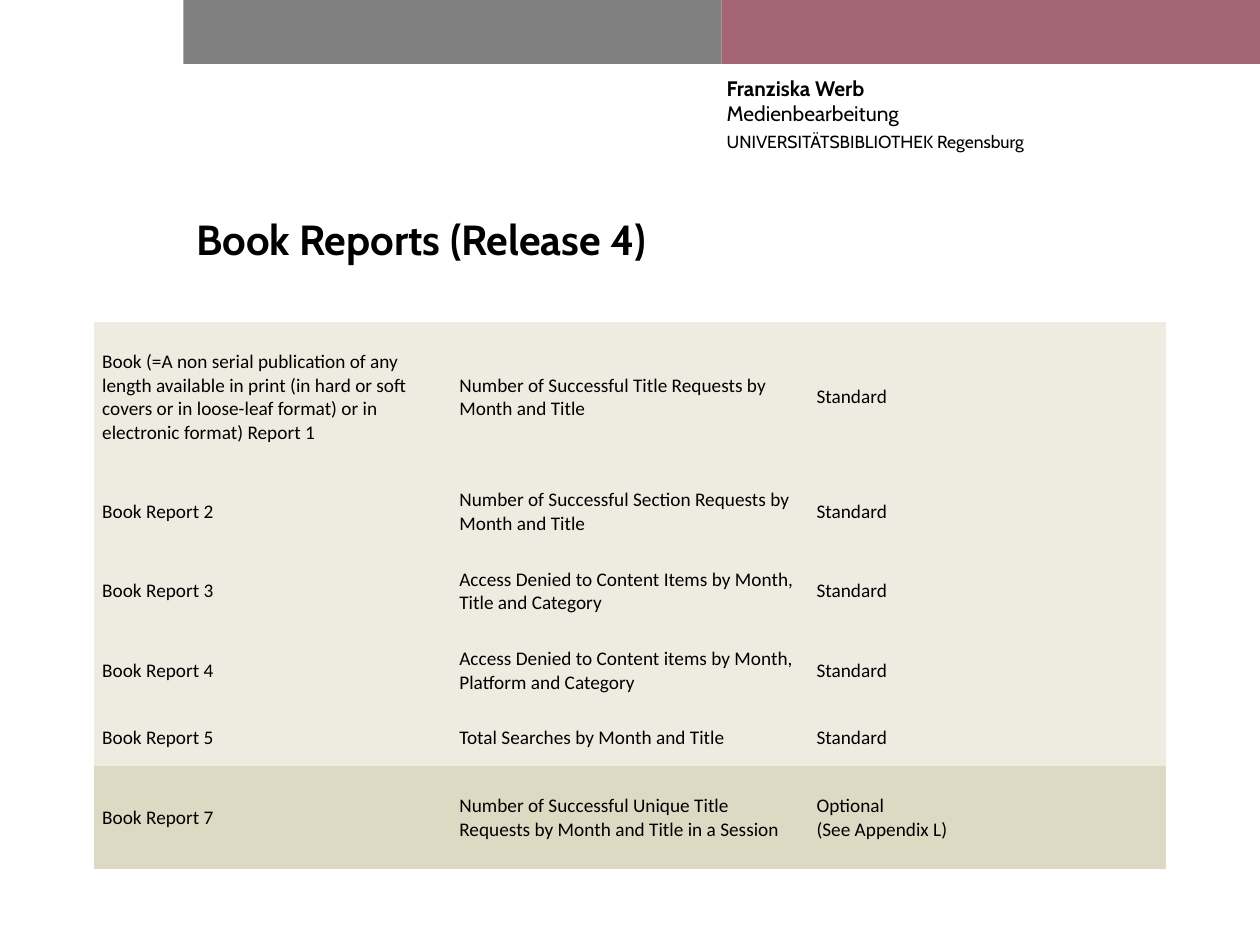
from dataclasses import dataclass

from pptx import Presentation
from pptx.dml.color import RGBColor
from pptx.enum.shapes import MSO_SHAPE
from pptx.enum.text import MSO_ANCHOR, PP_ALIGN
from pptx.util import Cm, Pt

RECTANGLE = MSO_SHAPE.RECTANGLE
TOP, MIDDLE = MSO_ANCHOR.TOP, MSO_ANCHOR.MIDDLE
LEFT = PP_ALIGN.LEFT
TITLE_ONLY = 5
PLAIN_TABLE_STYLE = "{2D5ABB26-0587-4C30-8999-92F81FD0307C}"


@dataclass(frozen=True)
class Theme:
    grey: str = "808080"
    rose: str = "A46674"
    text: str = "000000"
    standard: str = "EEECE1"
    optional: str = "DDD9C3"
    heading_font: str = "Cabin"
    table_font: str = "Calibri"
    title_size: int = 24
    author_size: int = 12
    library_size: int = 10
    table_size: int = 11


theme = Theme()


def set_font(font, name, size, bold=False):
    for attribute, value in {"name": name, "size": Pt(size), "bold": bold}.items():
        setattr(font, attribute, value)
    font.color.rgb = RGBColor.from_string(theme.text)


prs = Presentation()
prs.slide_width, prs.slide_height = Cm(25.4), Cm(19.05)
slide = prs.slides.add_slide(prs.slide_layouts[TITLE_ONLY])

# Header bars
bar_left, bar_width = 3.7, 10.85
for index, color in enumerate((theme.grey, theme.rose)):
    bar = slide.shapes.add_shape(RECTANGLE, Cm(bar_left + index * bar_width), 0,
                                 Cm(bar_width), Cm(1.29))
    bar.shadow.inherit = False
    bar.fill.solid()
    bar.fill.fore_color.rgb = RGBColor.from_string(color)
    bar.line.fill.background()

# Author and institution
author_frame = slide.shapes.add_textbox(Cm(14.65), Cm(1.52), Cm(10.26), Cm(2.39)).text_frame
no_margins = dict.fromkeys(("margin_left", "margin_top", "margin_right", "margin_bottom"), 0)
for attribute, value in {**no_margins, "word_wrap": True}.items():
    setattr(author_frame, attribute, value)

author = author_frame.paragraphs[0]
name = author.add_run()
name.text = "Franziska Werb"
set_font(name.font, theme.heading_font, theme.author_size, bold=True)
author.add_line_break()
department = author.add_run()
department.text = "Medienbearbeitung"
set_font(department.font, theme.heading_font, theme.author_size)

library = author_frame.add_paragraph()
library.text = "UNIVERSITÄTSBIBLIOTHEK Regensburg"
set_font(library.font, theme.heading_font, theme.library_size)
for paragraph in author_frame.paragraphs:
    paragraph.space_after = Pt(3)

# Title
title = slide.shapes.title
title_box = {"left": Cm(3.7), "top": Cm(4.17), "width": Cm(19.96), "height": Cm(1.93)}
for attribute, value in title_box.items():
    setattr(title, attribute, value)
title.text_frame.text = "Book Reports (Release 4)"
title.text_frame.vertical_anchor = TOP
heading = title.text_frame.paragraphs[0]
heading.alignment = LEFT
set_font(heading.font, theme.heading_font, theme.title_size, bold=True)

# Report table: row height, name, content, status
reports = [
    (3.02, "Book (=A non serial publication of any length available in print "
           "(in hard or soft covers or in loose-leaf format) or in electronic format) Report 1",
     "Number of Successful Title Requests by Month and Title", "Standard"),
    (1.6, "Book Report 2", "Number of Successful Section Requests by Month and Title", "Standard"),
    (1.6, "Book Report 3", "Access Denied to Content Items by Month, Title and Category",
     "Standard"),
    (1.6, "Book Report 4", "Access Denied to Content items by Month, Platform and Category",
     "Standard"),
    (1.12, "Book Report 5", "Total Searches by Month and Title", "Standard"),
    (2.08, "Book Report 7",
     "Number of Successful Unique Title Requests by Month and Title in a Session",
     "Optional\v(See Appendix L)"),
]
column_width = 7.2
cell_format = {
    "margin_left": Cm(0.16), "margin_right": Cm(0.16),
    "margin_top": Cm(0.08), "margin_bottom": Cm(0.08),
    "vertical_anchor": MIDDLE,
}
table = slide.shapes.add_table(len(reports), 3, Cm(1.9), Cm(6.5), Cm(3 * column_width),
                               Cm(sum(report[0] for report in reports))).table
table.first_row = table.horz_banding = False
table._tbl.tblPr[0].text = PLAIN_TABLE_STYLE
for column in table.columns:
    column.width = Cm(column_width)

for row, (height, *texts) in zip(table.rows, reports):
    row.height = Cm(height)
    fill = theme.standard if texts[-1] == "Standard" else theme.optional
    for cell, text in zip(row.cells, texts):
        cell.text = text
        for attribute, value in cell_format.items():
            setattr(cell, attribute, value)
        cell.fill.solid()
        cell.fill.fore_color.rgb = RGBColor.from_string(fill)
        set_font(cell.text_frame.paragraphs[0].font, theme.table_font, theme.table_size)

prs.save("out.pptx")
